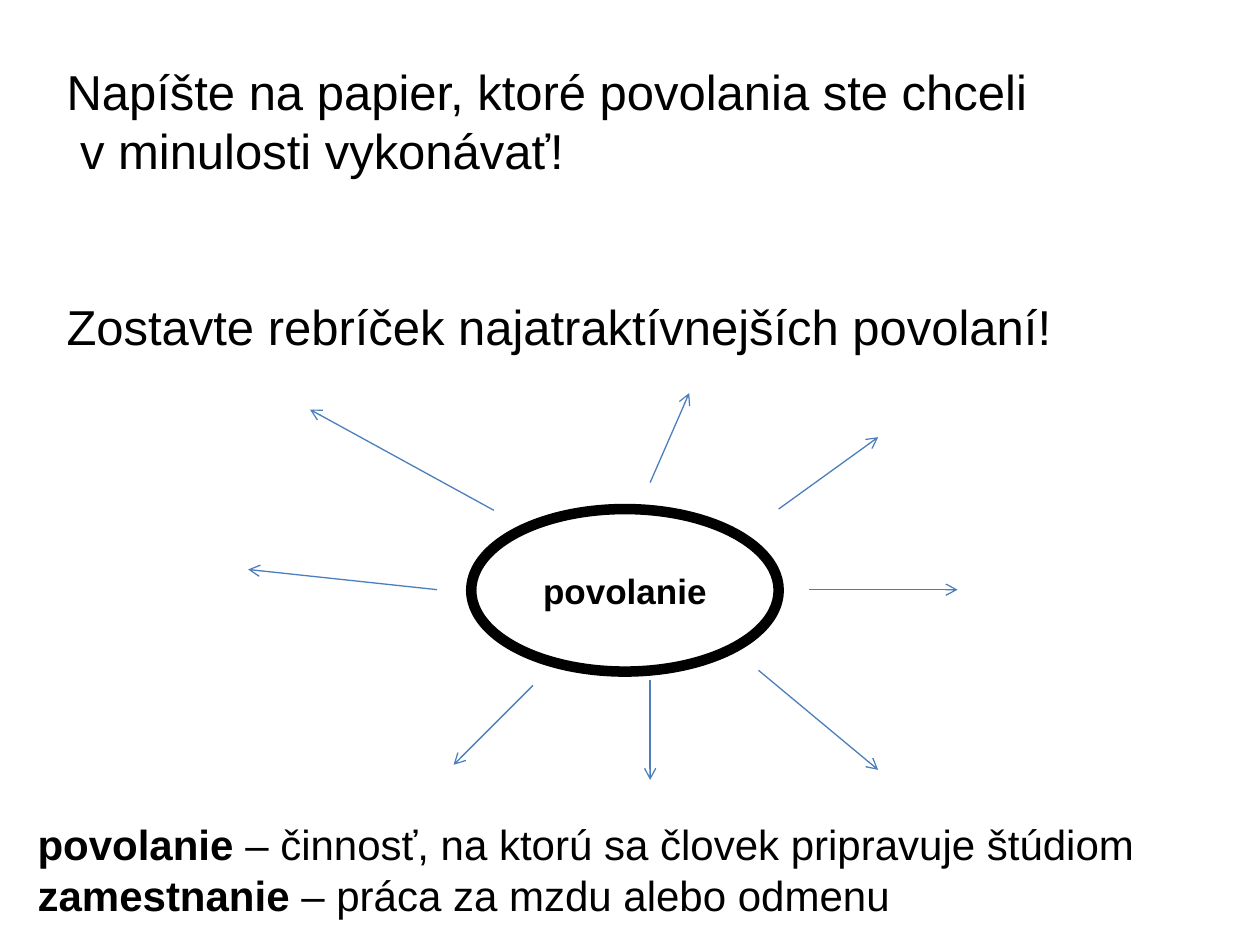
from lxml.etree import SubElement
from pptx import Presentation
from pptx.dml.color import RGBColor
from pptx.enum.shapes import MSO_CONNECTOR, MSO_SHAPE
from pptx.enum.text import MSO_ANCHOR, PP_ALIGN
from pptx.oxml.ns import qn
from pptx.util import Inches, Pt

FONT, BLACK, WHITE, BLUE = "Arial", "000000", "FFFFFF", "4B7EBC"

# Each paragraph is a list of (text, bold) runs.
TASKS = [
    [("Napíšte na papier, ktoré povolania ste chceli", False)],
    [(" v minulosti vykonávať!", False)],
    [("Zostavte rebríček najatraktívnejších povolaní!", False)],
]
TOPIC = [[("povolanie", True)]]
DEFINITIONS = [
    [("povolanie", True), (" – činnosť, na ktorú sa človek pripravuje štúdiom", False)],
    [("zamestnanie", True), (" – práca za mzdu alebo odmenu", False)],
]
# Clockwise from the top: start and tip of each ray, in inches.
RAYS = [
    ((5.16, 3.83), (5.47, 3.12)),
    ((6.18, 4.04), (6.97, 3.47)),
    ((6.42, 4.68), (7.6, 4.68)),
    ((6.02, 5.32), (6.97, 6.11)),
    ((5.16, 5.4), (5.16, 6.19)),
    ((4.23, 5.44), (3.6, 6.07)),
    ((3.47, 4.68), (1.97, 4.52)),
    ((3.92, 4.05), (2.46, 3.25)),
]


def rgb(color):
    return RGBColor.from_string(color)


def write(tf, paragraphs, size, color=BLACK, align=PP_ALIGN.LEFT):
    for i, runs in enumerate(paragraphs):
        p = tf.paragraphs[0] if i == 0 else tf.add_paragraph()
        p.alignment = align
        for text, bold in runs:
            r = p.add_run()
            r.text = text
            r.font.name, r.font.size, r.font.bold = FONT, Pt(size), bold
            r.font.color.rgb = rgb(color)


def add_text(s, box, paragraphs, size):
    tf = s.shapes.add_textbox(*map(Inches, box)).text_frame
    tf.word_wrap = False
    write(tf, paragraphs, size)
    return tf


def add_topic(s, box):
    sp = s.shapes.add_shape(MSO_SHAPE.OVAL, *map(Inches, box))
    sp.shadow.inherit = False
    sp.fill.solid()
    sp.fill.fore_color.rgb = rgb(WHITE)
    sp.line.color.rgb = rgb(BLACK)
    sp.line.width = Pt(6)
    sp.text_frame.vertical_anchor = MSO_ANCHOR.MIDDLE
    write(sp.text_frame, TOPIC, 20, align=PP_ALIGN.CENTER)


def add_ray(s, start, tip):
    line = s.shapes.add_connector(MSO_CONNECTOR.STRAIGHT, *map(Inches, start + tip))
    line.line.color.rgb = rgb(BLUE)
    line.line.width = Pt(0.75)
    SubElement(line.line._get_or_add_ln(), qn("a:tailEnd"), type="arrow")
    SubElement(line._element.spPr, qn("a:effectLst"))


def main():
    prs = Presentation()
    prs.slide_width, prs.slide_height = Inches(10), Inches(7.5)
    s = prs.slides.add_slide(prs.slide_layouts[6])

    tasks = add_text(s, (0.43, 0.44, 8.12, 2.46), TASKS, 28)
    tasks.paragraphs[-1].space_before = Pt(67)
    add_topic(s, (3.74, 4.04, 2.44, 1.29))
    for start, tip in RAYS:
        add_ray(s, start, tip)
    add_text(s, (0.2, 6.45, 8.99, 0.91), DEFINITIONS, 24)

    prs.save("out.pptx")


if __name__ == "__main__":
    main()
